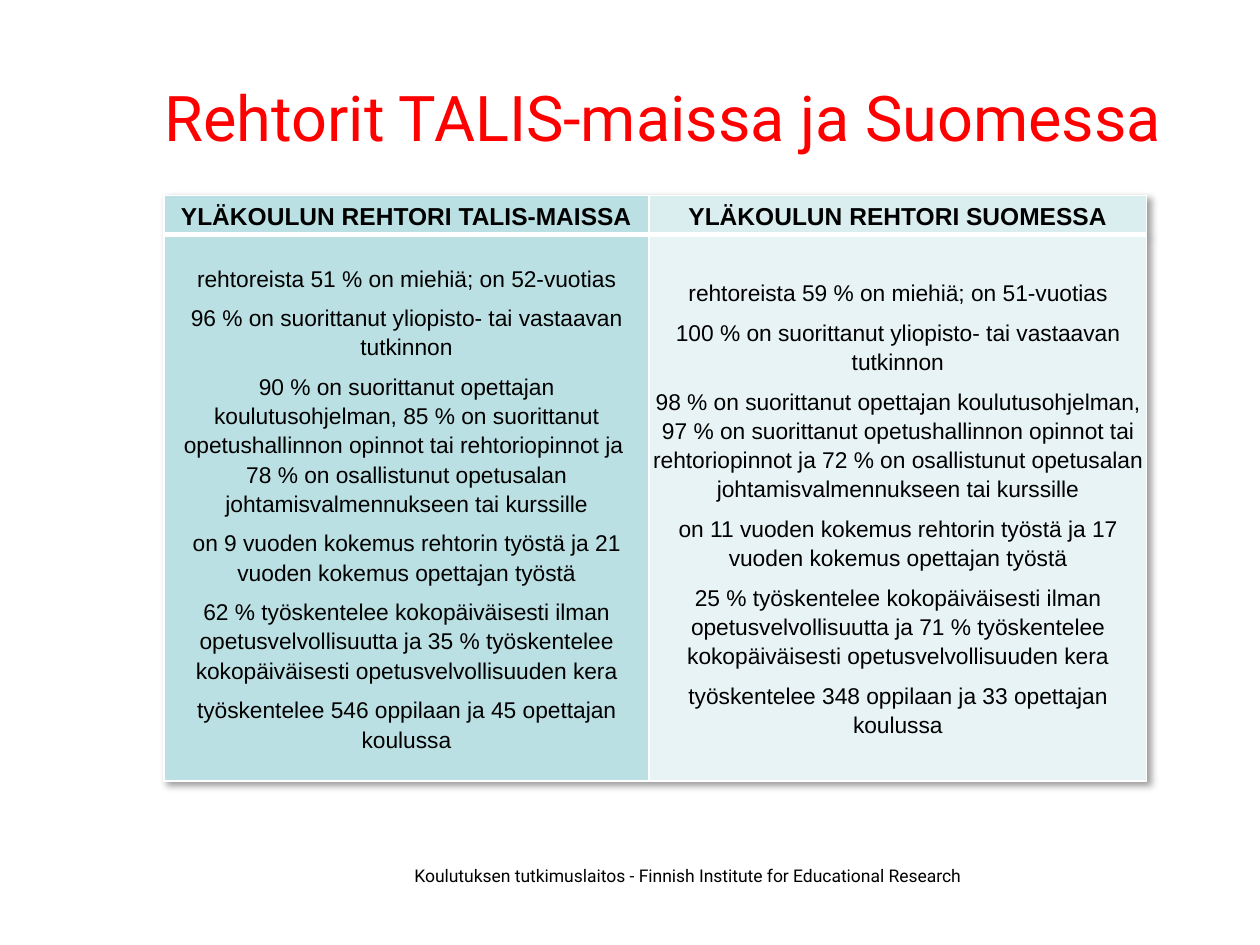
from copy import deepcopy
from lxml.etree import SubElement
from pptx import Presentation
from pptx.dml.color import RGBColor
from pptx.enum.text import MSO_ANCHOR as Anchor, PP_ALIGN as Align
from pptx.oxml import parse_xml
from pptx.oxml.ns import nsdecls, qn
from pptx.util import Inches, Pt

RED = RGBColor(0xFF, 0, 0)
BLACK = RGBColor(0, 0, 0)
WHITE = RGBColor(0xFF, 0xFF, 0xFF)
TEAL = RGBColor(0xBB, 0xE0, 0xE3)
PALE = RGBColor(0xDA, 0xED, 0xEF)
MIST = RGBColor(0xE7, 0xF3, 0xF4)

COLS = [3.85, 3.95]
ROWS = [0.31, 4.34]
FILLS = [[TEAL, PALE], [TEAL, MIST]]
HEADS = ["YLÄKOULUN REHTORI TALIS-MAISSA", "YLÄKOULUN REHTORI SUOMESSA"]
FACTS = [
    [
        "rehtoreista 51 % on miehiä; on 52-vuotias",
        "96 % on suorittanut yliopisto- tai vastaavan tutkinnon",
        "90 % on suorittanut opettajan koulutusohjelman, 85 % on suorittanut "
        "opetushallinnon opinnot tai rehtoriopinnot ja \v78 % on osallistunut "
        "opetusalan johtamisvalmennukseen tai kurssille",
        "on 9 vuoden kokemus rehtorin työstä ja 21 vuoden kokemus opettajan työstä",
        "62 % työskentelee kokopäiväisesti ilman opetusvelvollisuutta ja 35 % "
        "työskentelee kokopäiväisesti opetusvelvollisuuden kera",
        "työskentelee 546 oppilaan ja 45 opettajan koulussa",
    ],
    [
        "rehtoreista 59 % on miehiä; on 51-vuotias",
        "100 % on suorittanut yliopisto- tai vastaavan tutkinnon",
        "98 % on suorittanut opettajan koulutusohjelman, 97 % on suorittanut "
        "opetushallinnon opinnot tai rehtoriopinnot ja 72 % on osallistunut "
        "opetusalan johtamisvalmennukseen tai kurssille",
        "on 11 vuoden kokemus rehtorin työstä ja 17 vuoden kokemus opettajan työstä",
        "25 % työskentelee kokopäiväisesti ilman opetusvelvollisuutta ja 71 % "
        "työskentelee kokopäiväisesti opetusvelvollisuuden kera",
        "työskentelee 348 oppilaan ja 33 opettajan koulussa",
    ],
]


def write(frame, lines, size, face="Arial", color=BLACK, bold=False,
          align=Align.CENTER, lead=None, gap=None):
    for i, line in enumerate(lines):
        para = frame.add_paragraph() if i else frame.paragraphs[0]
        para.text = line
        para.alignment = align
        para.line_spacing = lead
        if gap is not None:
            para.space_before = Pt(gap if i else 0)
            para.space_after = Pt(gap)
        for run in para.runs:
            font = run.font
            font.size, font.name, font.bold = Pt(size), face, bold
            font.color.rgb = color
        for br in para._p.findall(qn("a:br")):
            br.append(deepcopy(para.runs[0]._r.rPr))


def edge(cell, widths):
    props = cell._tc.get_or_add_tcPr()
    for side, width in zip("LRTB", widths):
        line = SubElement(props, qn(f"a:ln{side}"), w=str(Pt(width)))
        fill = SubElement(line, qn("a:solidFill"))
        SubElement(fill, qn("a:srgbClr"), val=str(WHITE))


def shade(table):
    table._tbl.tblPr.insert(0, parse_xml(
        f'<a:effectLst {nsdecls("a")}><a:outerShdw blurRad="50800" dist="38100" '
        'dir="2700000" algn="tl" rotWithShape="0"><a:srgbClr val="000000">'
        '<a:alpha val="40000"/></a:srgbClr></a:outerShdw></a:effectLst>'))


def add_grid(slide):
    table = slide.shapes.add_table(
        len(ROWS), len(COLS), Inches(1.3), Inches(1.55),
        Inches(sum(COLS)), Inches(sum(ROWS))).table
    for col, width in zip(table.columns, COLS):
        col.width = Inches(width)
    for row, height in zip(table.rows, ROWS):
        row.height = Inches(height)
    for r, texts in enumerate([[[head] for head in HEADS], FACTS]):
        for c, lines in enumerate(texts):
            cell = table.cell(r, c)
            cell.margin_left = cell.margin_right = Inches(0.02)
            cell.margin_top = cell.margin_bottom = 0
            cell.vertical_anchor = Anchor.MIDDLE
            edge(cell, [1, 1, 3 if r else 1, 1 if r else 3])
            cell.fill.solid()
            cell.fill.fore_color.rgb = FILLS[r][c]
            write(cell.text_frame, lines, 13 if r else 14, bold=not r,
                  lead=1.15, gap=3)
    shade(table)


def add_title(slide):
    title = slide.shapes.title
    title.left, title.top = Inches(0.97), Inches(0.3)
    title.width, title.height = Inches(8.59), Inches(1.25)
    title.text_frame.vertical_anchor = Anchor.MIDDLE
    write(title.text_frame, ["Rehtorit TALIS-maissa ja Suomessa"], 36,
          face="Roboto", color=RED)


def add_foot(slide):
    box = slide.shapes.add_textbox(
        Inches(3.19), Inches(6.82), Inches(4.65), Inches(0.36))
    box.text_frame.word_wrap = True
    write(box.text_frame,
          ["Koulutuksen tutkimuslaitos - Finnish Institute for Educational Research"],
          10, face="Roboto", align=Align.LEFT)


def main():
    deck = Presentation()
    deck.slide_width, deck.slide_height = Inches(10), Inches(7.5)
    slide = deck.slides.add_slide(deck.slide_layouts[5])
    add_title(slide)
    add_grid(slide)
    add_foot(slide)
    deck.save("out.pptx")


if __name__ == "__main__":
    main()
